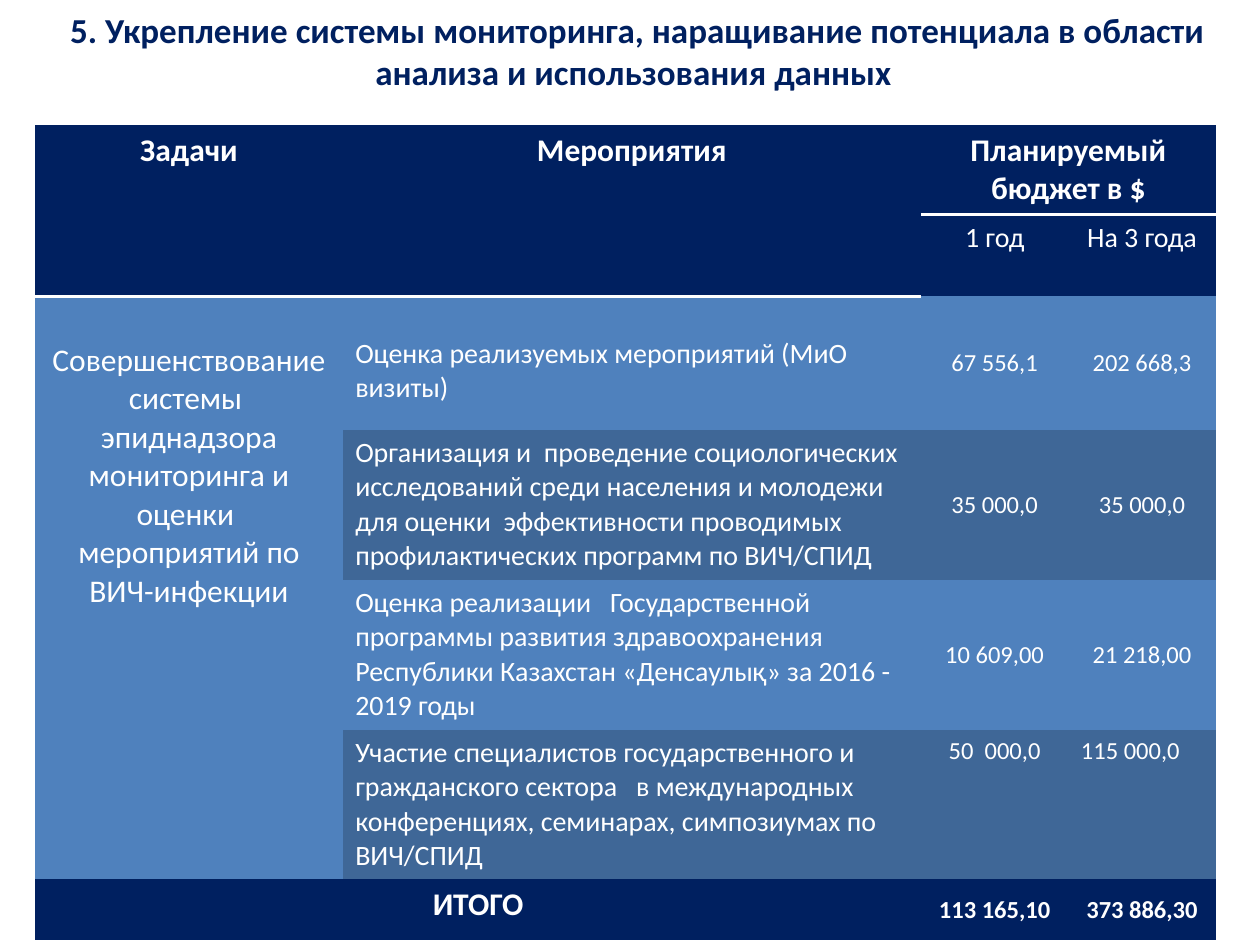
from dataclasses import dataclass
from typing import Optional

from lxml.etree import SubElement
from pptx import Presentation
from pptx.dml.color import RGBColor
from pptx.enum.text import MSO_ANCHOR, PP_ALIGN
from pptx.oxml.ns import qn
from pptx.util import Inches, Pt

NAVY = RGBColor(0x00, 0x20, 0x60)
BLUE = RGBColor(0x4F, 0x81, 0xBD)
DARK_BLUE = RGBColor(0x3F, 0x67, 0x97)
WHITE = RGBColor(0xFF, 0xFF, 0xFF)
FONT = "Calibri"
NO_STYLE = "{2D5ABB26-0587-4C30-8999-92F81FD0307C}"

COLUMN_WIDTHS = (2.44, 4.59, 1.17, 1.17)
ROW_HEIGHTS = (0.71, 0.65, 1.06, 1.19, 1.19, 1.19, 0.48)
FIRST_ACTIVITY_ROW = 2
TOTAL_ROW = 6


@dataclass
class CellSpec:
    row: int
    column: int
    text: str
    size: int
    fill: RGBColor
    bold: bool = False
    align: PP_ALIGN = PP_ALIGN.CENTER
    anchor: MSO_ANCHOR = MSO_ANCHOR.TOP
    rows: int = 1
    columns: int = 1
    underlined: bool = False
    top: float = 0.05
    tight: bool = False


@dataclass
class Activity:
    text: str
    budgets: tuple[str, str]
    fill: RGBColor
    top: float = 0.05
    anchor: MSO_ANCHOR = MSO_ANCHOR.MIDDLE
    last_align: PP_ALIGN = PP_ALIGN.CENTER
    tight: bool = False


HEADERS = [
    CellSpec(0, 0, "Задачи", 18, NAVY, bold=True, rows=2, underlined=True),
    CellSpec(0, 1, "Мероприятия", 18, NAVY, bold=True, rows=2, underlined=True),
    CellSpec(0, 2, "Планируемый бюджет в $", 18, NAVY, bold=True, columns=2, underlined=True),
    CellSpec(1, 2, "1 год", 16, NAVY),
    CellSpec(1, 3, "На 3 года", 16, NAVY),
]
TASK = CellSpec(
    FIRST_ACTIVITY_ROW, 0,
    "Совершенствование системы  эпиднадзора мониторинга и оценки  мероприятий по ВИЧ-инфекции",
    18, BLUE, rows=4, top=0.36,
)
ACTIVITIES = [
    Activity("Оценка реализуемых мероприятий (МиО визиты)",
             ("67 556,1", "202 668,3"), BLUE, top=0.32),
    Activity("Организация и  проведение социологических исследований среди населения и молодежи "
             "для оценки  эффективности проводимых профилактических программ по ВИЧ/СПИД",
             ("35 000,0", "35 000,0"), DARK_BLUE),
    Activity("Оценка реализации   Государственной программы развития здравоохранения "
             "Республики Казахстан «Денсаулық» за 2016 - 2019 годы",
             ("10 609,00", "21 218,00"), BLUE, tight=True),
    Activity("Участие специалистов государственного и  гражданского сектора   в международных  "
             "конференциях, семинарах, симпозиумах по ВИЧ/СПИД",
             ("50  000,0", "115 000,0"), DARK_BLUE,
             anchor=MSO_ANCHOR.TOP, last_align=PP_ALIGN.LEFT),
]
TOTAL = CellSpec(TOTAL_ROW, 0, "ИТОГО", 18, NAVY, bold=True, columns=2)
TOTAL_BUDGETS = ("113 165,10", "373 886,30")


def activity_cells(row: int, activity: Activity) -> list[CellSpec]:
    first, last = activity.budgets
    return [
        CellSpec(row, 1, activity.text, 16, activity.fill, align=PP_ALIGN.LEFT, top=activity.top),
        CellSpec(row, 2, first, 14, activity.fill, anchor=activity.anchor, tight=activity.tight),
        CellSpec(row, 3, last, 14, activity.fill, align=activity.last_align,
                 anchor=activity.anchor, tight=activity.tight),
    ]


def format_text(text_frame, size: int, color: RGBColor, bold: bool, align: PP_ALIGN) -> None:
    for paragraph in text_frame.paragraphs:
        paragraph.alignment = align
        for run in paragraph.runs:
            run.font.name = FONT
            run.font.size = Pt(size)
            run.font.bold = bold
            run.font.color.rgb = color


def add_bottom_border(cell) -> None:
    """Insert the line ahead of the fill, as the schema orders them."""
    properties = cell._tc.get_or_add_tcPr()
    line = SubElement(properties, qn("a:lnB"), w=str(Pt(2)))
    solid = SubElement(line, qn("a:solidFill"))
    SubElement(solid, qn("a:srgbClr"), val=str(WHITE))
    properties.insert(0, line)


def draw_cell(table, spec: CellSpec) -> None:
    cell = table.cell(spec.row, spec.column)
    last_row = spec.row + spec.rows - 1
    last_column = spec.column + spec.columns - 1
    if spec.rows > 1 or spec.columns > 1:
        cell.merge(table.cell(last_row, last_column))
    for row in range(spec.row, last_row + 1):
        for column in range(spec.column, last_column + 1):
            part = table.cell(row, column)
            part.fill.solid()
            part.fill.fore_color.rgb = spec.fill
            if spec.underlined:
                add_bottom_border(part)
    cell.vertical_anchor = spec.anchor
    cell.margin_top = Inches(spec.top)
    if spec.tight:
        cell.margin_left = cell.margin_right = cell.margin_top = Inches(0.01)
        cell.margin_bottom = 0
    cell.text_frame.text = spec.text
    format_text(cell.text_frame, spec.size, WHITE, spec.bold, spec.align)


def add_title(slide) -> None:
    title = slide.shapes.title
    title.left, title.top = Inches(0), Inches(0)
    title.width, title.height = Inches(10.12), Inches(0.8)
    title.text_frame.text = ("5. Укрепление системы мониторинга, наращивание потенциала "
                             "в области анализа и использования данных ")
    title.text_frame.vertical_anchor = MSO_ANCHOR.MIDDLE
    format_text(title.text_frame, 20, NAVY, True, PP_ALIGN.CENTER)


def add_budget_table(slide) -> None:
    frame = slide.shapes.add_table(
        len(ROW_HEIGHTS), len(COLUMN_WIDTHS), Inches(0.28), Inches(0.99),
        Inches(sum(COLUMN_WIDTHS)), Inches(sum(ROW_HEIGHTS)))
    table = frame.table
    table.first_row = table.horz_banding = False
    table._tbl.tblPr.find(qn("a:tableStyleId")).text = NO_STYLE
    for column, width in zip(table.columns, COLUMN_WIDTHS):
        column.width = Inches(width)
    for row, height in zip(table.rows, ROW_HEIGHTS):
        row.height = Inches(height)

    cells = [*HEADERS, TASK, TOTAL]
    for row, activity in enumerate(ACTIVITIES, FIRST_ACTIVITY_ROW):
        cells += activity_cells(row, activity)
    for column, budget in enumerate(TOTAL_BUDGETS, 2):
        cells.append(CellSpec(TOTAL_ROW, column, budget, 14, NAVY, bold=True,
                              anchor=MSO_ANCHOR.MIDDLE, tight=True))
    for spec in cells:
        draw_cell(table, spec)


def main() -> None:
    presentation = Presentation()
    presentation.slide_width, presentation.slide_height = Inches(10), Inches(7.5)
    slide = presentation.slides.add_slide(presentation.slide_layouts[5])
    add_title(slide)
    add_budget_table(slide)
    presentation.save("out.pptx")


if __name__ == "__main__":
    main()
